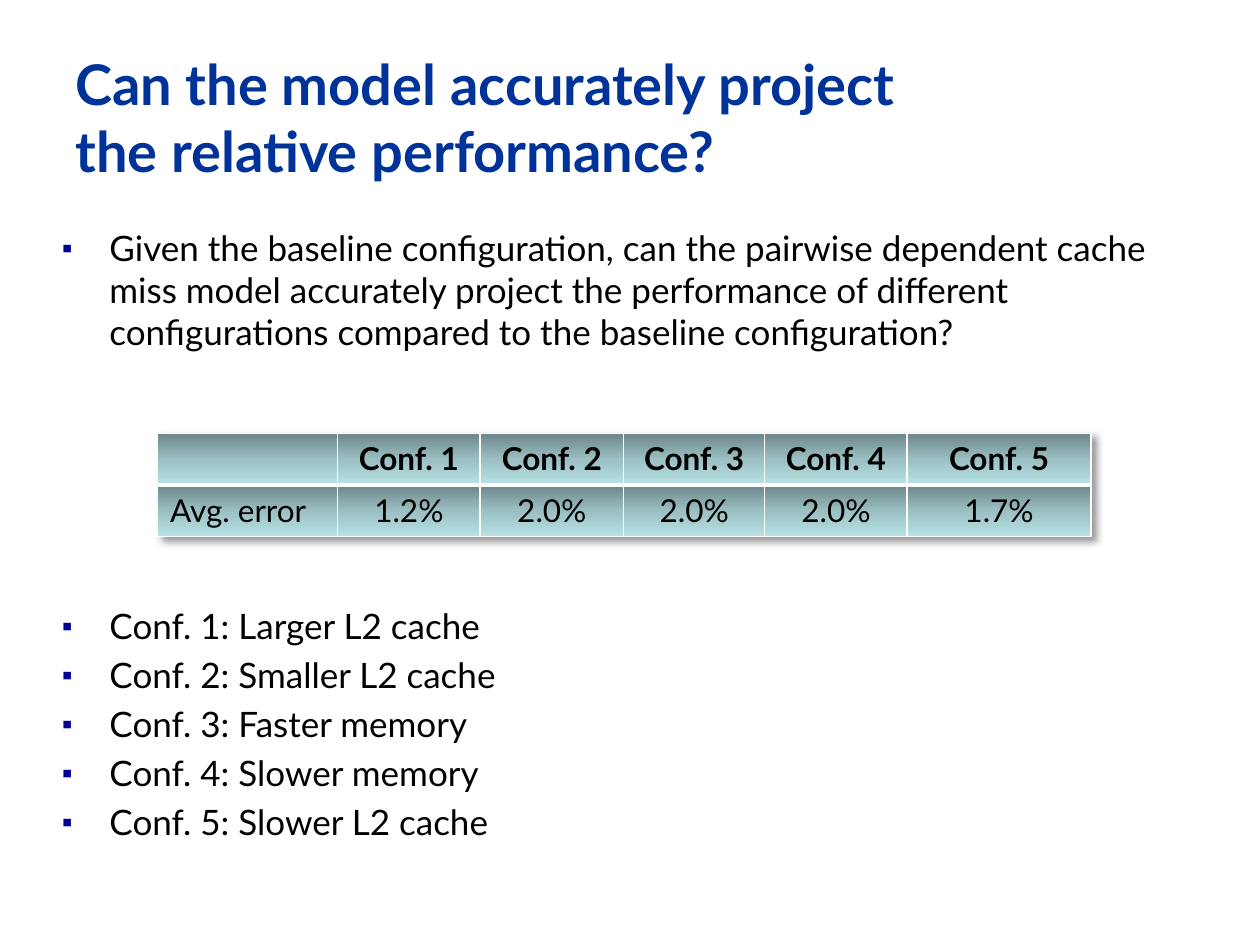
from lxml import etree
from pptx import Presentation
from pptx import util as u
from pptx.dml.color import RGBColor
from pptx.enum import text
from pptx.oxml import parse_xml
from pptx.oxml.ns import nsdecls, qn

FONT = "Lato"
BLACK, WHITE, TITLE_BLUE, BULLET_BLUE = "000000", "FFFFFF", "003399", "000099"
CELL_GRADIENT = [(0, "6D8688"), (50, "9BBFC2"), (100, "B8E3E6")]

TITLE = "Can the model accurately project\vthe relative performance?"
QUESTION = ["Given the baseline configuration, can the pairwise dependent cache "
            "miss model accurately project the performance of different "
            "configurations compared to the baseline configuration?"]
CONFIGS = ["Conf. 1: Larger L2 cache", "Conf. 2: Smaller L2 cache",
           "Conf. 3: Faster memory", "Conf. 4: Slower memory",
           "Conf. 5: Slower L2 cache"]
ERRORS = [["", "Conf. 1", "Conf. 2", "Conf. 3", "Conf. 4", "Conf. 5"],
          ["Avg. error", "1.2%", "2.0%", "2.0%", "2.0%", "1.7%"]]
COL_WIDTHS = [1.43, 1.13, 1.14, 1.12, 1.13, 1.46]
ROW_HEIGHT = 0.41


def rgb(value):
    return RGBColor.from_string(value)


def write(p, content, size=20, color=BLACK, bold=False,
          align=text.PP_ALIGN.LEFT, before=0):
    p.text = content
    p.alignment = align
    p.space_before = u.Pt(before)
    for r in p.runs:
        r.font.name = FONT
        r.font.size = u.Pt(size)
        r.font.bold = bold
        r.font.color.rgb = rgb(color)


def add_text_box(slide, left, top, width, height, anchor=text.MSO_ANCHOR.TOP):
    sp = slide.shapes.add_textbox(*map(u.Inches, (left, top, width, height)))
    tf = sp.text_frame
    tf.word_wrap = True
    tf.vertical_anchor = anchor
    return tf


def set_bullet(p):
    pPr = p._p.get_or_add_pPr()
    indent = u.Inches(0.38)
    pPr.set("marL", str(indent))
    pPr.set("indent", str(-indent))
    color = etree.SubElement(pPr, qn("a:buClr"))
    etree.SubElement(color, qn("a:srgbClr"), val=BULLET_BLUE)
    etree.SubElement(pPr, qn("a:buSzPct"), val="80000")
    etree.SubElement(pPr, qn("a:buFont"), typeface=FONT)
    etree.SubElement(pPr, qn("a:buChar"), char="▪")


def add_bullets(slide, items, top, height):
    tf = add_text_box(slide, 0.39, top, 9.11, height)
    for i, item in enumerate(items):
        p = tf.add_paragraph() if i else tf.paragraphs[0]
        set_bullet(p)
        write(p, item, before=4 if i else 0)


def style_cell(cell, borders):
    tcPr = cell._tc.get_or_add_tcPr()
    for side, width in borders.items():
        tcPr.append(parse_xml(
            f'<a:ln{side} {nsdecls("a")} w="{u.Pt(width)}"><a:solidFill>'
            f'<a:srgbClr val="{WHITE}"/></a:solidFill></a:ln{side}>'))
    stops = "".join(f'<a:gs pos="{pos * 1000}"><a:srgbClr val="{color}"/></a:gs>'
                    for pos, color in CELL_GRADIENT)
    tcPr.append(parse_xml(
        f'<a:gradFill {nsdecls("a")} rotWithShape="1"><a:gsLst>{stops}</a:gsLst>'
        '<a:lin ang="5400000" scaled="0"/></a:gradFill>'))


def add_table_shadow(table):
    table._tbl.tblPr.insert(0, parse_xml(
        f'<a:effectLst {nsdecls("a")}>'
        '<a:outerShdw blurRad="50800" dist="38100" dir="2700000" algn="tl">'
        '<a:srgbClr val="000000"><a:alpha val="40000"/></a:srgbClr>'
        '</a:outerShdw></a:effectLst>'))


def add_error_table(slide, left, top):
    size = sum(COL_WIDTHS), ROW_HEIGHT * len(ERRORS)
    table = slide.shapes.add_table(
        len(ERRORS), len(COL_WIDTHS),
        *map(u.Inches, (left, top, *size))).table
    for column, width in zip(table.columns, COL_WIDTHS):
        column.width = u.Inches(width)
    for i, row in enumerate(ERRORS):
        header = i == 0
        # The rule under the header is thicker than the other borders
        borders = {"L": 1, "R": 1, "T": 1 if header else 3, "B": 3 if header else 1}
        for j, value in enumerate(row):
            cell = table.cell(i, j)
            style_cell(cell, borders)
            if value:
                write(cell.text_frame.paragraphs[0], value, size=18, bold=header,
                      align=text.PP_ALIGN.CENTER if j else text.PP_ALIGN.LEFT)
    add_table_shadow(table)


def main():
    prs = Presentation()
    prs.slide_width, prs.slide_height = u.Inches(10), u.Inches(7.5)
    slide = prs.slides.add_slide(prs.slide_layouts[6])

    # Title
    tf = add_text_box(slide, 0.5, 0.3, 9, 1.25, text.MSO_ANCHOR.MIDDLE)
    write(tf.paragraphs[0], TITLE, size=32, color=TITLE_BLUE, bold=True)

    # Question, error table and list of configurations
    add_bullets(slide, QUESTION, 1.75, 1.2)
    add_error_table(slide, 1.25, 3.44)
    add_bullets(slide, CONFIGS, 4.75, 2.44)

    prs.save("out.pptx")


if __name__ == "__main__":
    main()
